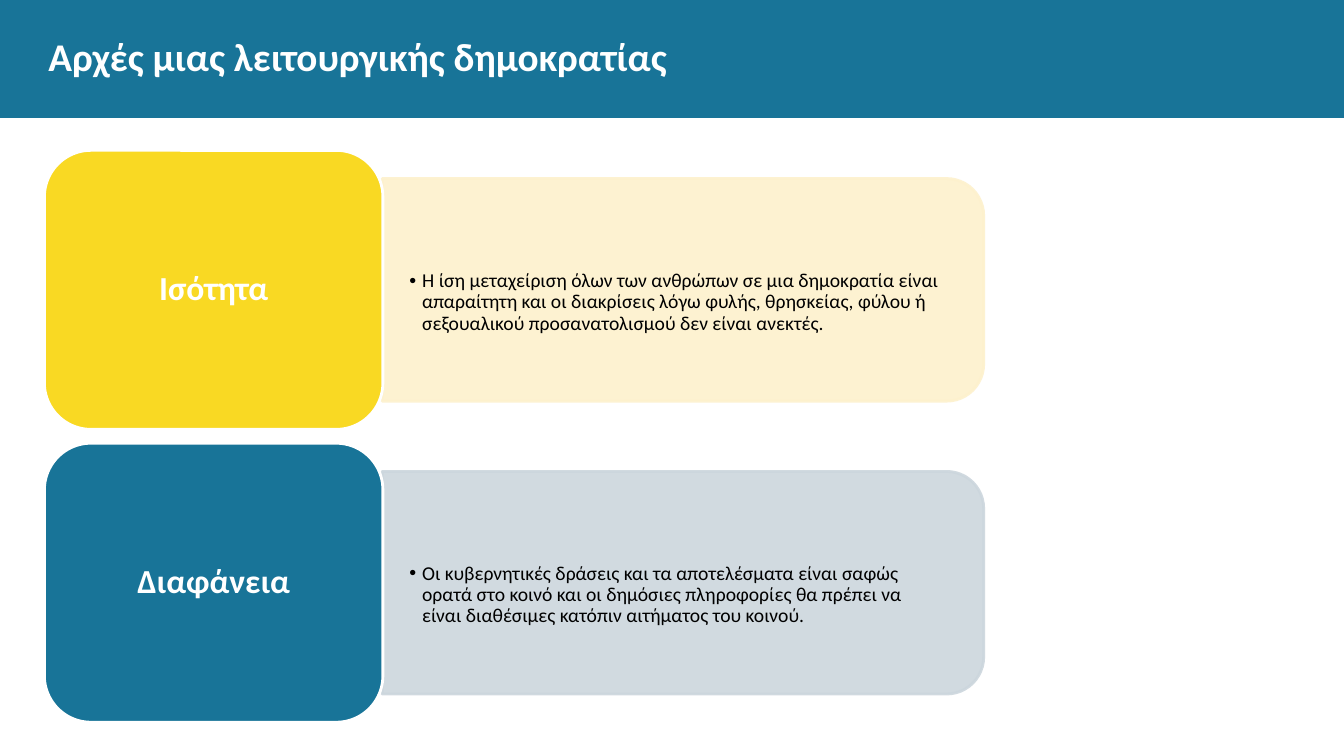
import pptx
import pptx.util
import pptx.dml.color
import pptx.enum.shapes
import pptx.enum.text
import pptx.oxml
import pptx.oxml.ns
import lxml.etree

Cm = pptx.util.Cm
Pt = pptx.util.Pt
RGBColor = pptx.dml.color.RGBColor
SHAPE = pptx.enum.shapes.MSO_SHAPE
ALIGN = pptx.enum.text.PP_ALIGN
MIDDLE = pptx.enum.text.MSO_ANCHOR.MIDDLE
qn = pptx.oxml.ns.qn

TEAL = RGBColor(0x18, 0x74, 0x98)
YELLOW = RGBColor(0xF9, 0xD9, 0x23)
CREAM = RGBColor(0xFD, 0xF1, 0xCD)
MIST = RGBColor(0xCC, 0xD6, 0xDD)
WHITE = RGBColor(0xFF, 0xFF, 0xFF)
BLACK = RGBColor(0x00, 0x00, 0x00)

PRINCIPLES = [
    ("Ισότητα", YELLOW, CREAM,
     "Η ίση μεταχείριση όλων των ανθρώπων σε μια δημοκρατία είναι απαραίτητη και οι "
     "διακρίσεις λόγω φυλής, θρησκείας, φύλου ή σεξουαλικού προσανατολισμού δεν είναι ανεκτές."),
    ("Διαφάνεια", TEAL, MIST,
     "Οι κυβερνητικές δράσεις και τα αποτελέσματα είναι σαφώς ορατά στο κοινό και οι "
     "δημόσιες πληροφορίες θα πρέπει να είναι διαθέσιμες κατόπιν αιτήματος του κοινού."),
]


def write(box, text, size, color, bold, align):
    frame = box.text_frame
    frame.word_wrap = True
    frame.auto_size = pptx.enum.text.MSO_AUTO_SIZE.NONE
    frame.vertical_anchor = MIDDLE
    frame.text = text
    para = frame.paragraphs[0]
    para.alignment = align
    font = para.runs[0].font
    font.name = "Calibri"
    font.size = Pt(size)
    font.bold = bold
    font.color.rgb = color
    return para


def add_block(kind, left, top, width, height, fill, line=None):
    block = page.shapes.add_shape(kind, Cm(left), Cm(top), Cm(width), Cm(height))
    block.shadow.inherit = False
    block.fill.solid()
    block.fill.fore_color.rgb = fill
    if line is None:
        block.line.fill.background()
    else:
        block.line.color.rgb = line
        block.line.width = Pt(2)
    return block


deck = pptx.Presentation()
deck.slide_width = Cm(33.87)
deck.slide_height = Cm(19.05)
page = deck.slides.add_slide(deck.slide_layouts[5])

title = page.shapes.title
title.left, title.top, title.width, title.height = Cm(1.22), Cm(0.46), Cm(31.65), Cm(1.88)
write(title, "Αρχές μιας λειτουργικής δημοκρατίας", 28, WHITE, True, ALIGN.LEFT)
frame = title.text_frame
frame.margin_left = frame.margin_right = frame.margin_top = frame.margin_bottom = 0

bar = add_block(SHAPE.RECTANGLE, 0, 0, 33.87, 2.97, TEAL)
title.element.addprevious(bar.element)

card_left, card_top, card_width, card_height = 1.12, 3.79, 8.53, 7.03
row_pitch = 7.38
panel_left, panel_width, panel_height = 9.63, 15.16, 5.61
text_width, text_height = 14.88, 5.08

for row, (name, color, tint, explanation) in enumerate(PRINCIPLES):
    top = card_top + row * row_pitch
    middle = top + card_height / 2

    panel = add_block(SHAPE.ROUND_2_SAME_RECTANGLE,
                      panel_left + (panel_width - panel_height) / 2, middle - panel_width / 2,
                      panel_height, panel_width, tint, tint)
    panel.rotation = 90
    for paint in panel.element.spPr.iter(qn("a:srgbClr")):
        lxml.etree.SubElement(paint, qn("a:alpha")).set("val", "90000")

    box = page.shapes.add_textbox(Cm(panel_left), Cm(middle - text_height / 2),
                                  Cm(text_width), Cm(text_height))
    para = write(box, explanation, 14, BLACK, False, ALIGN.LEFT)
    para.line_spacing = 0.9
    box.text_frame.margin_left = box.text_frame.margin_right = Cm(0.69)
    box.text_frame.margin_top = Cm(1)
    box.text_frame.margin_bottom = Cm(0.36)
    settings = para._p.get_or_add_pPr()
    settings.set("marL", str(Cm(0.32)))
    settings.set("indent", str(-Cm(0.32)))
    lxml.etree.SubElement(settings, qn("a:buFont")).set("typeface", "Arial")
    lxml.etree.SubElement(settings, qn("a:buChar")).set("char", "•")

    card = add_block(SHAPE.ROUNDED_RECTANGLE, card_left, top, card_width, card_height, color, WHITE)
    write(card, name, 24, WHITE, True, ALIGN.CENTER).line_spacing = 0.9

deck.save("out.pptx")
